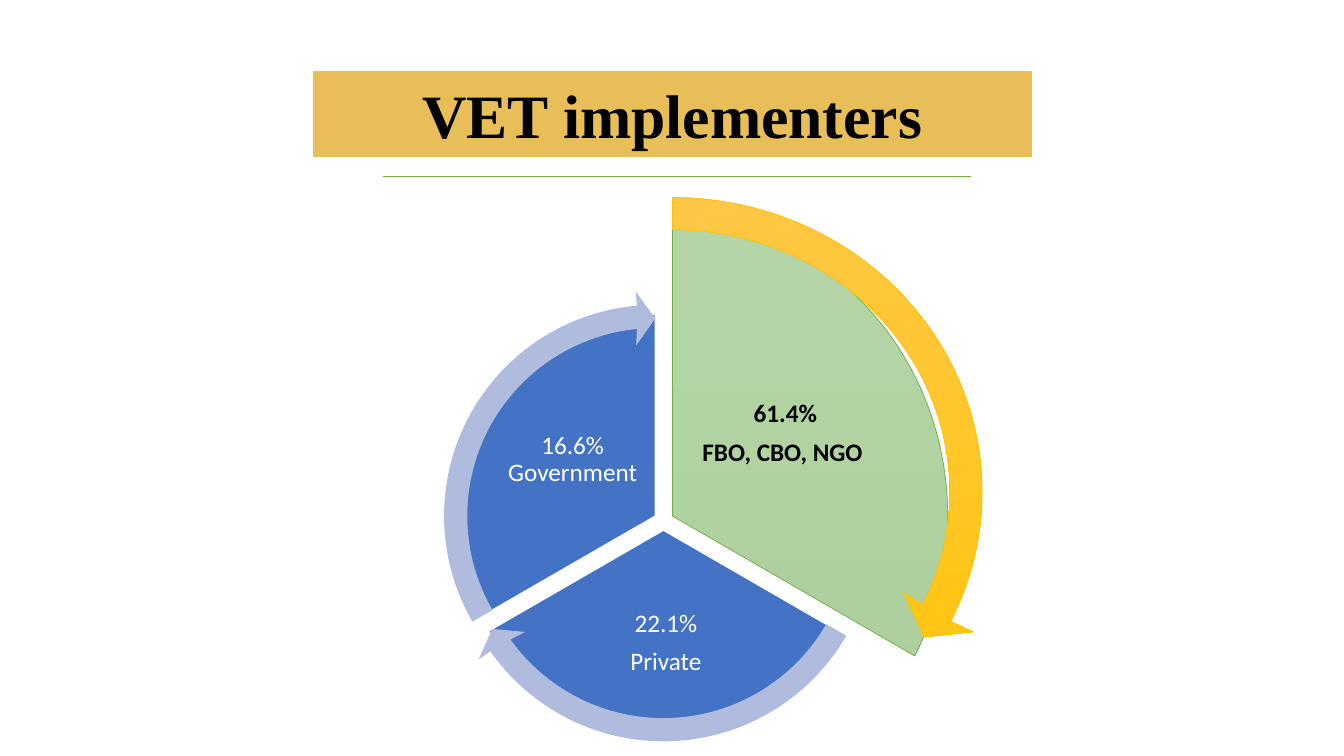
from math import atan2, cos, radians, sin, tan

from lxml.etree import SubElement
from pptx import Presentation
from pptx.dml.color import RGBColor
from pptx.enum.shapes import MSO_CONNECTOR
from pptx.enum.text import MSO_ANCHOR, MSO_AUTO_SIZE, PP_ALIGN
from pptx.oxml.ns import qn
from pptx.util import Inches, Pt

GOLD, GREEN, BLUE, PALE_BLUE = "E7BE57", "70AD47", "4472C4", "B0BCDE"
BLACK, WHITE = "000000", "FFFFFF"
THIRD = 120  # degrees in each slice


def rgb(color):
    return RGBColor.from_string(color)


def polar(center, radius, angle):
    """Point on a circle; degrees run clockwise from the right."""
    return (center[0] + radius * cos(radians(angle)),
            center[1] + radius * sin(radians(angle)))


def arc(center, rx, ry, start, end):
    """Elliptical arc as its first point and two Bézier curves."""
    def parameter(angle):
        turn = radians(angle)
        # keep the angle continuous past half a turn
        return turn + atan2((rx - ry) * sin(turn) * cos(turn),
                            ry * cos(turn) ** 2 + rx * sin(turn) ** 2)

    def point(t, pull=0):
        return (center[0] + rx * (cos(t) - pull * sin(t)),
                center[1] + ry * (sin(t) + pull * cos(t)))

    stops = [parameter(angle) for angle in (start, (start + end) / 2, end)]
    curves = []
    for t0, t1 in zip(stops, stops[1:]):
        pull = 4 / 3 * tan((t1 - t0) / 4)
        curves.append((point(t0, pull), point(t1, -pull), point(t1)))
    return (point(stops[0]),), curves


def outline(slide, center, half_size, steps, fill, line=None, width=1):
    """Closed freeform whose steps hold one point (line) or three (curve).

    Fill is one colour or a (top, bottom) gradient.
    """
    left, top = [Inches(c - h) for c, h in zip(center, half_size)]
    right, bottom = [Inches(c + h) for c, h in zip(center, half_size)]
    builder = slide.shapes.build_freeform(left, top)
    builder.add_line_segments([(right, top), (right, bottom), (left, bottom)])
    shape = builder.convert_to_shape()
    route = next(shape._element.iter(qn("a:path")))
    for corner in list(route):
        route.remove(corner)
    for index, points in enumerate(steps):
        tag = "a:cubicBezTo" if len(points) == 3 else "a:lnTo"
        step = SubElement(route, qn(tag if index else "a:moveTo"))
        for x, y in points:
            SubElement(step, qn("a:pt"), x=str(Inches(x) - left),
                       y=str(Inches(y) - top))
    SubElement(route, qn("a:close"))

    shape.shadow.inherit = False
    if isinstance(fill, tuple):
        shape.fill.gradient()
        shape.fill.gradient_angle = 270
        for stop, color, position in zip(shape.fill.gradient_stops, fill, (0, 1)):
            stop.color.rgb = rgb(color)
            stop.position = position
    else:
        shape.fill.solid()
        shape.fill.fore_color.rgb = rgb(fill)
    if line:
        shape.line.color.rgb = rgb(line)
        shape.line.width = Pt(width)
    else:
        shape.line.fill.background()
    return shape


def add_heading(slide, left, top, width, height):
    title = slide.shapes.title
    title.left, title.top = Inches(left), Inches(top)
    title.width, title.height = Inches(width), Inches(height)
    title.fill.solid()
    title.fill.fore_color.rgb = rgb(GOLD)
    title.line.color.rgb = rgb(GOLD)
    title.line.width = Pt(1)
    frame = title.text_frame
    frame.text = "VET implementers"
    frame.auto_size = MSO_AUTO_SIZE.NONE
    frame.vertical_anchor = MSO_ANCHOR.MIDDLE
    frame.paragraphs[0].alignment = PP_ALIGN.CENTER
    font = frame.paragraphs[0].runs[0].font
    font.name, font.size, font.bold = "Times New Roman", Pt(44), True
    font.color.rgb = rgb(BLACK)

    rule_y = Inches(top + height + 0.2)
    rule = slide.shapes.add_connector(
        MSO_CONNECTOR.STRAIGHT, Inches(left + 0.69), rule_y,
        Inches(left + width - 0.6), rule_y)
    rule.line.color.rgb = rgb(GREEN)
    rule.line.width = Pt(1)
    SubElement(rule._element.spPr, qn("a:effectLst"))


def add_slice(slide, center, radii, start, text, insets, fill,
              line=WHITE, width=1, color=WHITE, bold=False):
    first, curves = arc(center, *radii, start, start + THIRD)
    steps = [first, *curves, (center,), first]
    frame = outline(slide, center, radii, steps, fill, line, width).text_frame
    frame.text = text
    frame.word_wrap = True
    frame.vertical_anchor = MSO_ANCHOR.MIDDLE
    (frame.margin_left, frame.margin_top,
     frame.margin_right, frame.margin_bottom) = map(Inches, insets)
    for paragraph in frame.paragraphs:
        paragraph.alignment = PP_ALIGN.CENTER
        paragraph.line_spacing = 0.9
        paragraph.space_after = Pt(8)
        font = paragraph.runs[0].font
        font.name, font.size, font.bold = "Calibri", Pt(18), bold
        font.color.rgb = rgb(color)


def add_arc_arrow(slide, center, radii, band, start, fill, line=None):
    """Curved arrow around a slice, its tip at the slice's far edge."""
    rx, ry = radii
    tip = start + THIRD
    head = [(polar(center, rx * share, angle),)
            for share, angle in ((1.13, tip - 5), (0.99, tip), (0.86, tip - 6.4))]
    first, outer = arc(center, rx + band / 2, ry + band / 2, start, tip - 5)
    turn, inner = arc(center, rx - band / 2, ry - band / 2, tip - 5.6, start)
    outline(slide, center, (rx * 1.13, ry * 1.13),
            [first, *outer, *head, turn, *inner], fill, line, 0.5)


def add_cycle(slide, x, y):
    """Three slices and their arrows around the point x, y."""
    ngo, private, government = (x + 0.09, y), (x, y + 0.14), (x - 0.08, y)
    add_slice(slide, ngo, (2.73, 2.93), -90, "61.4%\nFBO, CBO, NGO ",
              (2.9, 1.27, 0.66, 2.9), ("B5D5A7", "AACE99"),
              line=GREEN, width=0.5, color=BLACK, bold=True)
    add_slice(slide, private, (2, 2), 30, "22.1%\nPrivate",
              (0.98, 2.62, 0.93, 0.38), BLUE)
    add_slice(slide, government, (2, 2), 150, "16.6% Government",
              (0.49, 0.87, 2.13, 1.99), BLUE)
    add_arc_arrow(slide, (ngo[0], y - 0.24), (2.91, 2.76), 0.32, -90,
                  ("FFC746", "FFC600"), "FFC000")
    for center, start in ((private, 30), (government, 150)):
        add_arc_arrow(slide, center, (1.98, 1.98), 0.23, start, PALE_BLUE)


def main():
    deck = Presentation()
    deck.slide_width, deck.slide_height = Inches(13.33), Inches(7.5)
    slide = deck.slides.add_slide(deck.slide_layouts[5])
    add_heading(slide, 3.11, 0.71, 7.12, 0.84)
    add_cycle(slide, 6.58, 5.12)
    deck.save("out.pptx")


if __name__ == "__main__":
    main()
